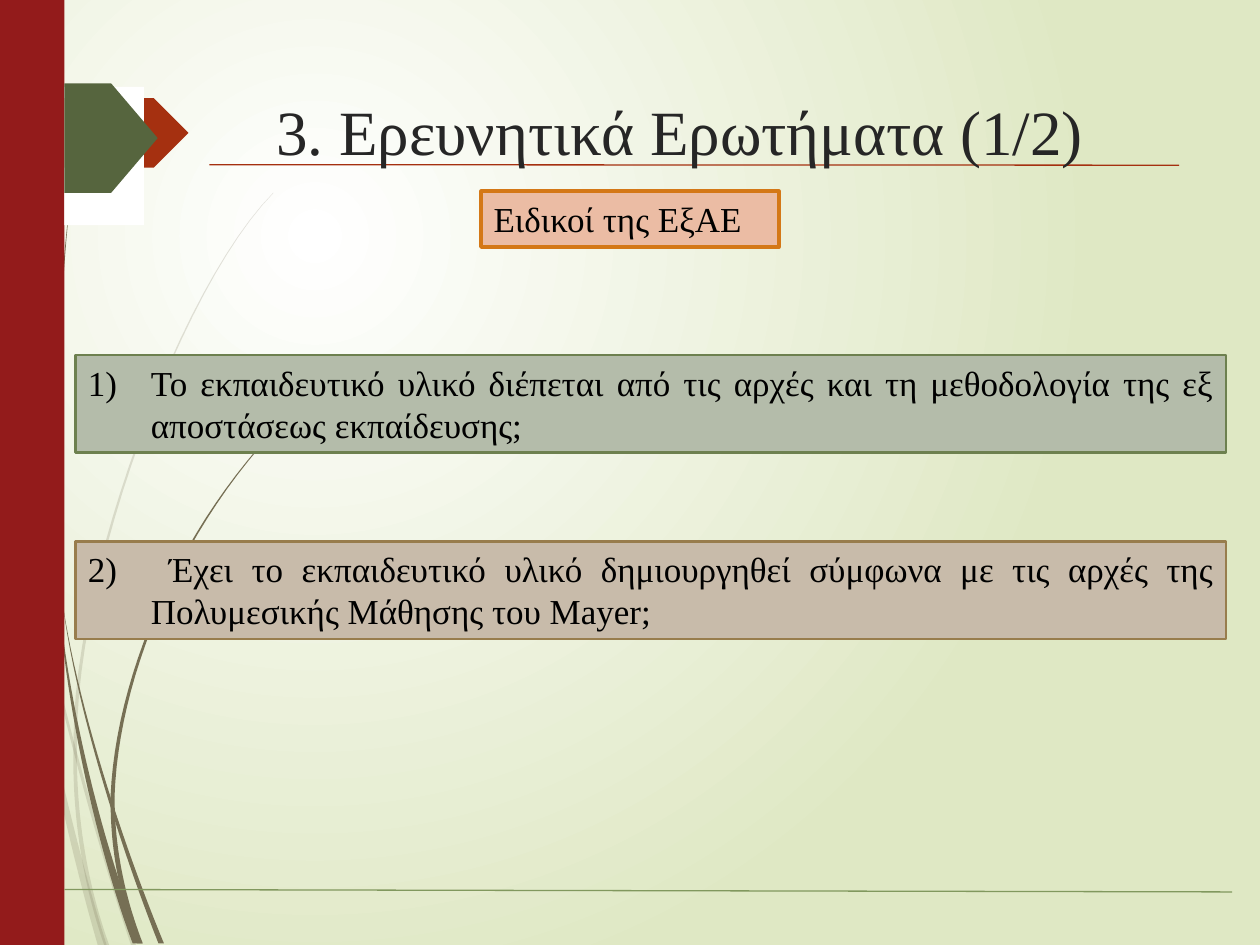
from collections import namedtuple
from lxml import etree
from pptx import Presentation
from pptx import util as u
from pptx.dml.color import RGBColor
from pptx.enum import shapes, text
from pptx.oxml.ns import qn

WHITE = RGBColor(0xFF, 0xFF, 0xFF)
BLACK = RGBColor(0x00, 0x00, 0x00)
CHARCOAL = RGBColor(0x26, 0x26, 0x26)
PALE_GREEN = RGBColor(0xDF, 0xE8, 0xC4)
STALK_BROWN = RGBColor(0x76, 0x6F, 0x54)
RUST = RGBColor(0xA5, 0x30, 0x10)
CRIMSON = RGBColor(0x93, 0x1B, 0x1B)
LEAF = RGBColor(0x81, 0x98, 0x5E)
OLIVE = RGBColor(0x56, 0x65, 0x3E)
SAGE, SAGE_EDGE = RGBColor(0xB4, 0xBC, 0xAA), RGBColor(0x6D, 0x80, 0x4F)
SAND, SAND_EDGE = RGBColor(0xC8, 0xBB, 0xAA), RGBColor(0x98, 0x7D, 0x4D)
PEACH, PEACH_EDGE = RGBColor(0xEB, 0xBC, 0xA4), RGBColor(0xD4, 0x78, 0x17)

FONT = "Times New Roman"
SLIDE_WIDTH, SLIDE_HEIGHT = 25.4, 19.05
BAR_WIDTH = 1.3
CURVE_STEPS = 24
UNITS_PER_CM = 1000

Stalk = namedtuple("Stalk", "tip tip_pull root_pull root tip_width root_width")
Question = namedtuple("Question", "top color edge wording")

FAINT_STALKS = [
    Stalk((0.25, 8.76), (0.58, 11.94), (1.73, 16.26), (2.69, 19.05), 0, 0.1),
    Stalk((0.2, 8.89), (0.36, 12.19), (1.22, 16.26), (2.06, 19.05), 0, 0.18),
    Stalk((5.51, 3.89), (3.65, 5.77), (1.52, 11.56), (1.52, 14.86), 0.01, 0.07),
    Stalk((1.52, 14.86), (1.47, 16.51), (1.75, 17.91), (2.15, 19.05), 0.07, 0.1),
]
DARK_STALKS = [
    Stalk((1.47, 3.58), (1.17, 5.84), (1.04, 9.4), (1.19, 12.12), 0, 0.08),
    Stalk((1.24, 11.99), (1.5, 14.1), (2.44, 17.02), (3.25, 19.02), 0, 0.11),
    Stalk((1.19, 12.12), (1.35, 14.22), (2.03, 17.15), (2.77, 19.02), 0, 0.19),
    Stalk((5.47, 8.74), (3.52, 10.87), (2.36, 13.72), (2.27, 16.05), 0.02, 0.08),
    Stalk((2.27, 16.05), (2.26, 17.15), (2.49, 18.16), (2.82, 19.02), 0.08, 0.12),
]
QUESTIONS = [
    Question(7.16, SAGE, SAGE_EDGE,
             "Το εκπαιδευτικό υλικό διέπεται από τις αρχές και τη μεθοδολογία της "
             "εξ αποστάσεως εκπαίδευσης;"),
    Question(10.92, SAND, SAND_EDGE,
             " Έχει το εκπαιδευτικό υλικό δημιουργηθεί σύμφωνα με τις αρχές της "
             "Πολυμεσικής Μάθησης του Mayer;"),
]


def apply(target, values):
    for name, value in values.items():
        setattr(target, name, value)


def cm(values):
    return [u.Cm(value) for value in values]


def paint_background(slide):
    fill = slide.background.fill
    fill.gradient()
    for stop, color in zip(fill.gradient_stops, (WHITE, PALE_GREEN)):
        stop.color.rgb = color
    gradient = next(slide.element.iter(qn("a:gradFill")))
    gradient.remove(gradient.find(qn("a:lin")))
    glow = etree.SubElement(gradient, qn("a:path"), path="circle")
    etree.SubElement(glow, qn("a:fillToRect"),
                     l="50000", t="50000", r="100000", b="100000")


def paint(shape, color, edge=None, edge_width=0):
    shape.shadow.inherit = False
    shape.fill.solid()
    shape.fill.fore_color.rgb = color
    if edge is None:
        shape.line.fill.background()
    else:
        shape.line.color.rgb = edge
        shape.line.width = u.Pt(edge_width)


def bezier(t, start, start_pull, end_pull, end):
    s = 1 - t
    weights = (s ** 3, 3 * s * s * t, 3 * s * t * t, t ** 3)
    return sum(w * v for w, v in zip(weights, (start, start_pull, end_pull, end)))


def stalk_outline(stalk):
    left, right = [], []
    xs, ys = zip(stalk.tip, stalk.tip_pull, stalk.root_pull, stalk.root)
    for step in range(CURVE_STEPS + 1):
        t = step / CURVE_STEPS
        x, y = bezier(t, *xs), bezier(t, *ys)
        half = (stalk.tip_width + (stalk.root_width - stalk.tip_width) * t) / 2
        left.append((x - half, y))
        right.append((x + half, y))
    return [(round(x * UNITS_PER_CM), round(y * UNITS_PER_CM))
            for x, y in left + right[::-1]]


def add_stalk(slide, stalk, opacity):
    tip, *rest = stalk_outline(stalk)
    builder = slide.shapes.build_freeform(*tip, scale=u.Cm(1) / UNITS_PER_CM)
    builder.add_line_segments(rest)
    outline = builder.convert_to_shape()
    paint(outline, STALK_BROWN)
    if opacity < 100:
        tint = next(outline.element.spPr.iter(qn("a:srgbClr")))
        etree.SubElement(tint, qn("a:alpha"), val=str(opacity * 1000))


def add_block(slide, kind, place, *colors):
    block = slide.shapes.add_shape(kind, *cm(place))
    paint(block, *colors)
    return block


def add_rule(slide, ends, color):
    rule = slide.shapes.add_connector(shapes.MSO_CONNECTOR.STRAIGHT, *cm(ends))
    rule.line.width = u.Pt(0.75)
    rule.line.color.rgb = color
    etree.SubElement(rule.element.spPr, qn("a:effectLst"))


def write(shape, wording, size, color, align, fit):
    frame = shape.text_frame
    apply(frame, {"text": wording, "word_wrap": True, "auto_size": fit,
                  "vertical_anchor": text.MSO_ANCHOR.TOP})
    paragraph = frame.paragraphs[0]
    paragraph.alignment = align
    font = paragraph.runs[0].font
    apply(font, {"name": FONT, "size": u.Pt(size)})
    font.color.rgb = color
    return paragraph


def add_label(slide, place, color, edge, edge_width, wording, align):
    label = add_block(slide, shapes.MSO_SHAPE.RECTANGLE, place, color, edge, edge_width)
    return write(label, wording, 20, BLACK, align, text.MSO_AUTO_SIZE.SHAPE_TO_FIT_TEXT)


def number(paragraph, start):
    indent = u.Cm(1.27)
    properties = paragraph._p.get_or_add_pPr()
    properties.set("marL", str(indent))
    properties.set("indent", str(-indent))
    etree.SubElement(properties, qn("a:buFont"), typeface="+mj-lt")
    etree.SubElement(properties, qn("a:buAutoNum"), type="arabicParenR", startAt=str(start))


def set_title(slide, wording):
    title = slide.shapes.title
    left, top, width, height = cm((2.91, 1.73, 21.59, 1.6))
    apply(title, {"left": left, "top": top, "width": width, "height": height})
    write(title, wording, 36, CHARCOAL, text.PP_ALIGN.CENTER, text.MSO_AUTO_SIZE.NONE)
    slide.shapes.element.append(title.element)


def decorate(slide):
    box, arrow = shapes.MSO_SHAPE.RECTANGLE, shapes.MSO_SHAPE.PENTAGON
    for stalks, opacity in ((FAINT_STALKS, 20), (DARK_STALKS, 100)):
        for stalk in stalks:
            add_stalk(slide, stalk, opacity)
    add_block(slide, arrow, (0, 1.98, 3.8, 1.4), RUST)
    add_block(slide, box, (0, 0, BAR_WIDTH, SLIDE_HEIGHT), CRIMSON)
    add_rule(slide, (4.22, 3.32, 23.77, 3.33), RUST)
    add_rule(slide, (BAR_WIDTH, 17.93, 24.84, 17.98), LEAF)
    add_block(slide, box, (BAR_WIDTH, 1.75, 1.6, 2.79), WHITE)
    add_block(slide, arrow, (BAR_WIDTH, 1.68, 1.88, 2.21), OLIVE)


def main():
    deck = Presentation()
    apply(deck, {"slide_width": u.Cm(SLIDE_WIDTH), "slide_height": u.Cm(SLIDE_HEIGHT)})
    slide = deck.slides.add_slide(deck.slide_layouts[5])
    paint_background(slide)
    decorate(slide)
    set_title(slide, "3. Ερευνητικά Ερωτήματα (1/2)")
    for start, question in enumerate(QUESTIONS, 1):
        paragraph = add_label(slide, (1.52, question.top, 23.2, 1.96), question.color,
                              question.edge, 1.5, question.wording, text.PP_ALIGN.JUSTIFY)
        number(paragraph, start)
    add_label(slide, (9.7, 3.86, 6, 1.12), PEACH, PEACH_EDGE, 2.25,
              "Ειδικοί της ΕξΑΕ", text.PP_ALIGN.LEFT)
    deck.save("out.pptx")


if __name__ == "__main__":
    main()
